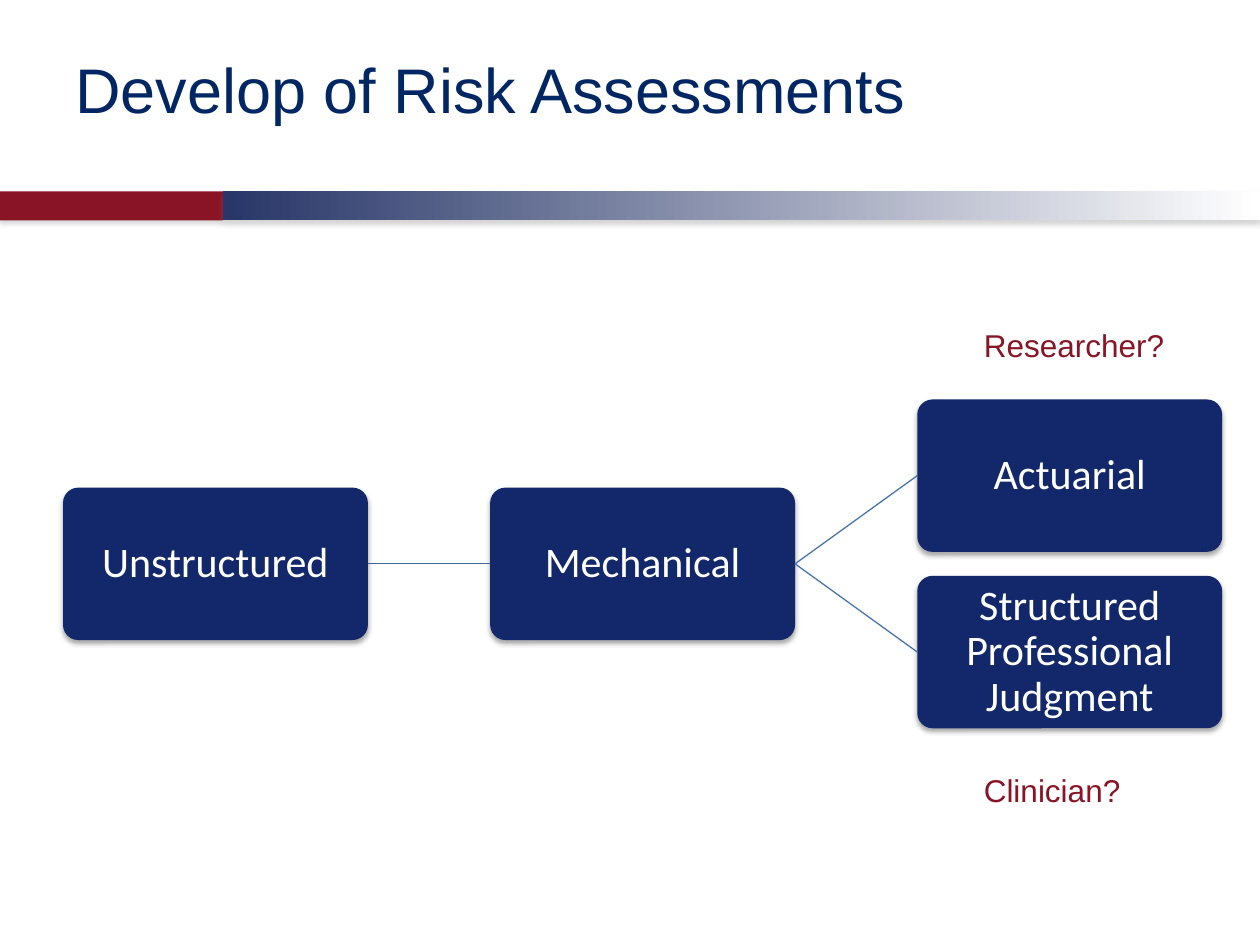
from dataclasses import dataclass

from lxml.etree import SubElement
from pptx import Presentation
from pptx.dml.color import RGBColor
from pptx.enum.shapes import MSO_CONNECTOR, MSO_SHAPE
from pptx.enum.text import MSO_ANCHOR, PP_ALIGN
from pptx.oxml.ns import qn
from pptx.util import Inches, Pt


@dataclass(frozen=True)
class Theme:
    title: str = "002663"
    band_red: str = "891426"
    band_blue: str = "283668"
    box: str = "13286A"
    label: str = "881426"
    white: str = "FFFFFF"
    link: str = "3F6797"
    branch: str = "4875AC"
    band_shadow: str = "808080"
    box_shadow: str = "000000"
    heading_font: str = "Arial"
    box_font: str = "Calibri"
    title_size: int = 36
    box_size: int = 24
    label_size: int = 18


class SlideBuilder:
    def __init__(self, slide, theme):
        self.slide = slide
        self.theme = theme

    def set_text(self, tf, text, font, size, color):
        tf.text = text
        p = tf.paragraphs[0]
        for r in p.runs:
            r.font.name = font
            r.font.size = Pt(size)
            r.font.color.rgb = RGBColor.from_string(color)
        return p

    def shadow(self, sp, color):
        sp.shadow.inherit = False
        effects = sp._element.spPr.find(qn("a:effectLst"))
        outer = SubElement(effects, qn("a:outerShdw"), blurRad=str(Pt(3.1)),
                           dist=str(Pt(1.8)), dir="5400000", rotWithShape="0")
        clr = SubElement(outer, qn("a:srgbClr"), val=color)
        SubElement(clr, qn("a:alpha"), val="35000")

    def shape(self, kind, x, y, w, h, color, shadow):
        sp = self.slide.shapes.add_shape(kind, Inches(x), Inches(y), Inches(w), Inches(h))
        sp.fill.solid()
        sp.fill.fore_color.rgb = RGBColor.from_string(color)
        sp.line.fill.background()
        self.shadow(sp, shadow)
        return sp

    def band(self, x, w, color, fade_to=None):
        sp = self.shape(MSO_SHAPE.RECTANGLE, x, 1.52, w, 0.23, color, self.theme.band_shadow)
        if fade_to:
            sp.fill.gradient()
            sp.fill.gradient_angle = 0
            for stop, stop_color in zip(sp.fill.gradient_stops, (color, fade_to)):
                stop.color.rgb = RGBColor.from_string(stop_color)

    def text(self, text, x, y, w, h, size, color, wrap=False):
        sp = self.slide.shapes.add_textbox(Inches(x), Inches(y), Inches(w), Inches(h))
        tf = sp.text_frame
        tf.word_wrap = wrap
        self.set_text(tf, text, self.theme.heading_font, size, color)

    def box(self, text, x, y):
        t = self.theme
        sp = self.shape(MSO_SHAPE.ROUNDED_RECTANGLE, x, y, 2.42, 1.21, t.box, t.box_shadow)
        sp.adjustments[0] = 0.1
        tf = sp.text_frame
        tf.word_wrap = True
        tf.vertical_anchor = MSO_ANCHOR.MIDDLE
        tf.margin_left = tf.margin_right = tf.margin_top = tf.margin_bottom = Inches(0.05)
        p = self.set_text(tf, text, t.box_font, t.box_size, t.white)
        p.alignment = PP_ALIGN.CENTER
        p.line_spacing = 0.9
        return sp

    def link(self, start, end, color):
        cn = self.slide.shapes.add_connector(MSO_CONNECTOR.STRAIGHT, 0, 0, 0, 0)
        cn.begin_connect(start, 3)
        cn.end_connect(end, 1)
        cn.line.color.rgb = RGBColor.from_string(color)
        cn.line.width = Pt(0.75)
        SubElement(cn._element.spPr, qn("a:effectLst"))


def main():
    prs = Presentation()
    prs.slide_width, prs.slide_height = Inches(10), Inches(7.5)
    theme = Theme()
    s = SlideBuilder(prs.slides.add_slide(prs.slide_layouts[6]), theme)

    s.band(0, 1.77, theme.band_red)
    s.band(1.77, 8.23, theme.band_blue, fade_to=theme.white)
    s.text("Develop of Risk Assessments", 0.5, 0.35, 9.2, 0.71,
           theme.title_size, theme.title, wrap=True)

    left, step, middle, offset = 0.5, 3.39, 3.87, 0.7
    unstructured = s.box("Unstructured", left, middle)
    mechanical = s.box("Mechanical", left + step, middle)
    s.link(unstructured, mechanical, theme.link)
    for text, side in (("Actuarial", -1), ("Structured Professional Judgment", 1)):
        outcome = s.box(text, left + 2 * step, middle + side * offset)
        s.link(mechanical, outcome, theme.branch)

    for text, y, w in (("Researcher?", 2.54, 1.65), ("Clinician?", 6.07, 1.3)):
        s.text(text, 7.71, y, w, 0.4, theme.label_size, theme.label)

    prs.save("out.pptx")


if __name__ == "__main__":
    main()
